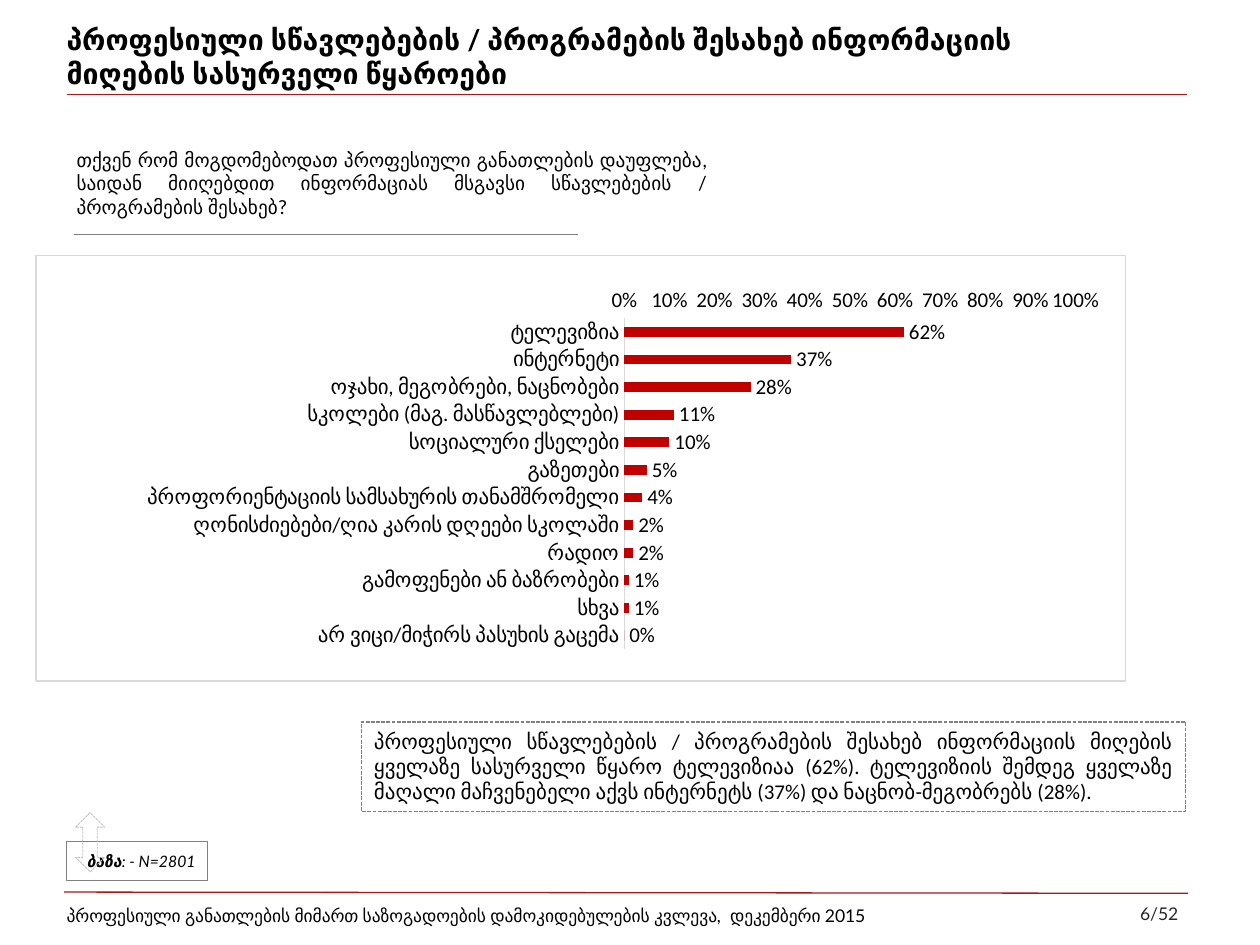
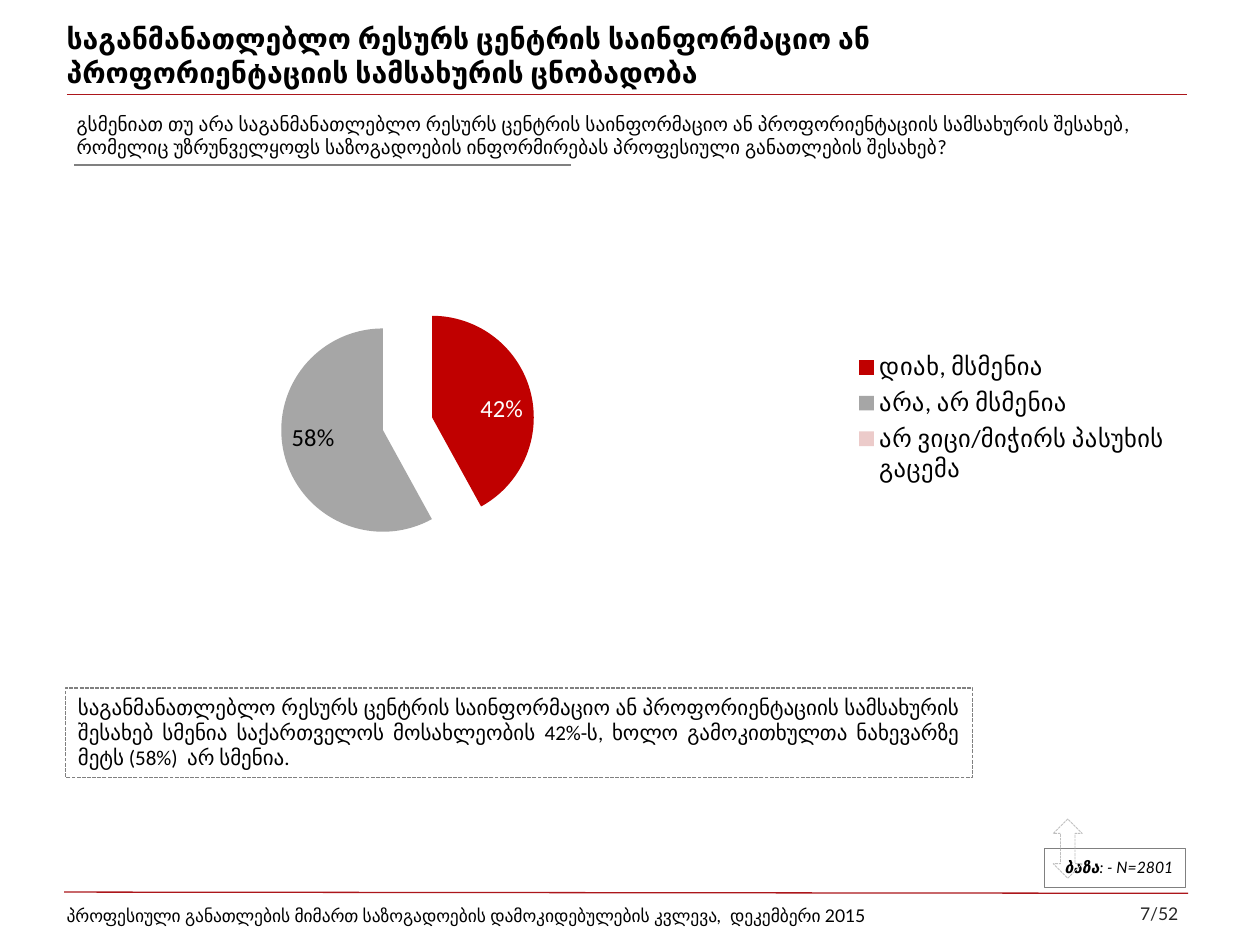
"""Builds two survey slides: preferred information sources and service awareness."""
from lxml.etree import SubElement
from pptx import Presentation
from pptx.chart.data import CategoryChartData
from pptx.dml.color import RGBColor
from pptx.enum.chart import XL_CHART_TYPE as ChartType, XL_LABEL_POSITION as LabelPosition
from pptx.enum.chart import XL_LEGEND_POSITION as LegendPosition, XL_TICK_MARK as TickMark
from pptx.enum.dml import MSO_LINE as Dash
from pptx.enum.shapes import MSO_CONNECTOR as Connector, MSO_SHAPE as Shape
from pptx.enum.text import MSO_ANCHOR as Anchor, PP_ALIGN as Align
from pptx.oxml import parse_xml
from pptx.oxml.ns import nsdecls, qn
from pptx.util import Inches, Pt

colour = RGBColor.from_string
BLACK, WHITE, RED, GREY = "000000", "FFFFFF", "C00000", "808080"
RULE_RED, PALE_GREY = "AC161B", "BFBFBF"
FOOTER = "პროფესიული განათლების მიმართ საზოგადოების დამოკიდებულების კვლევა,  დეკემბერი 2015"
TITLE_FONT = {"name": "Lato", "size": Pt(16.2), "bold": True}
QUESTION_FONT = {"name": "Lato", "size": Pt(11)}
FOOTER_FONT = {"name": "Lato", "size": Pt(10)}
NOTE_FONT = {"name": "Calibri", "size": Pt(12)}
BASE_FONT = {"name": "Lato", "size": Pt(9), "italic": True}


def write(holder, runs, align=Align.LEFT, anchor=Anchor.MIDDLE, ink=BLACK):
    """Fill a shape with one paragraph made of (text, font format) runs."""
    frame = holder.text_frame
    frame.word_wrap = True
    frame.vertical_anchor = anchor
    paragraph = frame.paragraphs[0]
    paragraph.alignment = align
    for words, font_format in runs:
        run = paragraph.add_run()
        run.text = words
        run.font.color.rgb = colour(ink)
        for attribute, value in font_format.items():
            setattr(run.font, attribute, value)


def set_layout(parent, index, box, target=None):
    """Give a plot area or legend a fixed place, in fractions of the chart."""
    for old in parent.findall(qn("c:layout")):
        parent.remove(old)
    layout = parse_xml(f"<c:layout {nsdecls('c')}><c:manualLayout/></c:layout>")
    settings = [("layoutTarget", target)] if target else []
    settings += [("xMode", "edge"), ("yMode", "edge"), *zip("xywh", box)]
    for tag, value in settings:
        SubElement(layout[0], qn(f"c:{tag}")).set("val", str(value))
    parent.insert(index, layout)


pages = [
    {
        "number": "6/52",
        "title": "პროფესიული სწავლებების / პროგრამების შესახებ ინფორმაციის მიღების სასურველი წყაროები",
        "title_box": (0.43, 0.21, 8.5, 0.47),
        "question": "თქვენ რომ მოგდომებოდათ პროფესიული განათლების დაუფლება, საიდან მიიღებდით "
                    "ინფორმაციას მსგავსი სწავლებების / პროგრამების შესახებ?",
        "question_box": (0.51, 1.13, 5.2, 0.66),
        "question_align": Align.JUSTIFY,
        "underline": (0.59, 1.86, 4.59, 1.86),
        "base_corner": (0.53, 6.68),
        "note": "პროფესიული სწავლებების / პროგრამების შესახებ ინფორმაციის მიღების ყველაზე სასურველი "
                "წყარო ტელევიზიაა (62%). ტელევიზიის შემდეგ ყველაზე მაღალი მაჩვენებელი აქვს "
                "ინტერნეტს (37%) და ნაცნობ-მეგობრებს (28%).",
        "note_box": (2.87, 5.73, 6.54, 0.71),
        "chart_type": ChartType.BAR_CLUSTERED,
        "chart_box": (0.28, 2.02, 8.66, 3.39),
        "chart_size": 12,
        "plot_box": (0.54, 0.148, 0.414, 0.778),
        "shares": {
            "ტელევიზია": 0.62,
            "ინტერნეტი": 0.37,
            "ოჯახი, მეგობრები, ნაცნობები": 0.28,
            "სკოლები (მაგ. მასწავლებლები)": 0.11,
            "სოციალური ქსელები": 0.1,
            "გაზეთები": 0.05,
            "პროფორიენტაციის სამსახურის თანამშრომელი": 0.04,
            "ღონისძიებები/ღია კარის დღეები სკოლაში": 0.02,
            "რადიო": 0.02,
            "გამოფენები ან ბაზრობები": 0.01,
            "სხვა": 0.01,
            "არ ვიცი/მიჭირს პასუხის გაცემა": 0,
        },
    },
    {
        "number": "7/52",
        "title": "საგანმანათლებლო რესურს ცენტრის საინფორმაციო ან პროფორიენტაციის სამსახურის ცნობადობა",
        "title_box": (0.43, 0.21, 8.35, 0.45),
        "question": "გსმენიათ თუ არა საგანმანათლებლო რესურს ცენტრის საინფორმაციო ან პროფორიენტაციის "
                    "სამსახურის შესახებ, რომელიც უზრუნველყოფს საზოგადოების ინფორმირებას "
                    "პროფესიული განათლების შესახებ?",
        "question_box": (0.51, 0.84, 8.58, 0.47),
        "question_align": Align.LEFT,
        "underline": (0.59, 1.31, 4.53, 1.31),
        "base_corner": (8.29, 6.73),
        "note": "საგანმანათლებლო რესურს ცენტრის საინფორმაციო ან პროფორიენტაციის სამსახურის შესახებ "
                "სმენია საქართველოს მოსახლეობის 42%-ს, ხოლო გამოკითხულთა ნახევარზე მეტს (58%)  "
                "არ სმენია.",
        "note_box": (0.52, 5.46, 7.2, 0.71),
        "chart_type": ChartType.PIE,
        "chart_box": (0.2, 1.55, 9.21, 3.54),
        "chart_size": 14,
        "plot_box": (0.22, 0.085, 0.219, 0.855),
        "shares": {
            "დიახ, მსმენია": 0.42,
            "არა, არ მსმენია": 0.58,
            "არ ვიცი/მიჭირს პასუხის გაცემა": 0,
        },
    },
]

deck = Presentation()
deck.slide_width, deck.slide_height = Inches(10), Inches(7.5)
charts = []

for page in pages:
    slide = deck.slides.add_slide(deck.slide_layouts[6])
    shapes = slide.shapes

    rules = [((0.51, 7.08, 9.43, 7.09), RULE_RED), ((0.53, 0.75, 9.42, 0.75), RULE_RED),
             (page["underline"], GREY)]
    for ends, ink in rules:
        rule = shapes.add_connector(Connector.STRAIGHT, *map(Inches, ends))
        rule.line.color.rgb = colour(ink)
        rule.line.width = Pt(0.75)
        SubElement(rule._element.spPr, qn("a:effectLst"))

    texts = [
        ((7.92, 7.04, 1.53, 0.42), page["number"], FOOTER_FONT, Align.RIGHT, Anchor.MIDDLE, "262626"),
        ((0.43, 7.07, 7.01, 0.4), FOOTER, FOOTER_FONT, Align.LEFT, Anchor.MIDDLE, BLACK),
        (page["title_box"], page["title"], TITLE_FONT, Align.LEFT, Anchor.MIDDLE, BLACK),
        (page["question_box"], page["question"], QUESTION_FONT, page["question_align"], Anchor.TOP, BLACK),
    ]
    for box, words, font_format, align, anchor, ink in texts:
        write(shapes.add_textbox(*map(Inches, box)), [(words, font_format)], align, anchor, ink)

    left, top = page["base_corner"]
    base = shapes.add_shape(Shape.RECTANGLE, *map(Inches, (left, top, 1.12, 0.31)))
    arrow = shapes.add_shape(Shape.UP_DOWN_ARROW, *map(Inches, (left + 0.07, top - 0.23, 0.23, 0.47)))
    note = shapes.add_shape(Shape.RECTANGLE, *map(Inches, page["note_box"]))
    outlines = [(base, GREY, 0.5, None), (arrow, PALE_GREY, 0.5, Dash.SQUARE_DOT),
                (note, GREY, 0.75, Dash.SQUARE_DOT)]
    for outlined, ink, width, dash in outlines:
        outlined.shadow.inherit = False
        outlined.fill.background()
        outlined.line.color.rgb = colour(ink)
        outlined.line.width = Pt(width)
        outlined.line.dash_style = dash
    write(base, [("ბაზა", {**BASE_FONT, "bold": True}), (": - N=2801", BASE_FONT)], Align.RIGHT)
    write(note, [(page["note"], NOTE_FONT)], Align.JUSTIFY, Anchor.TOP)

    survey = CategoryChartData(number_format="0%")
    survey.categories = list(page["shares"])
    survey.add_series("Series 1", list(page["shares"].values()))
    chart = shapes.add_chart(page["chart_type"], *map(Inches, page["chart_box"]), survey).chart
    chart.has_title = False
    chart.has_legend = False
    chart.font.name = "Calibri"
    chart.font.size = Pt(page["chart_size"])
    chart.font.color.rgb = colour(BLACK)
    set_layout(chart._chartSpace.chart.plotArea, 0, page["plot_box"], "inner")
    plot = chart.plots[0]
    plot.has_data_labels = True
    labels = plot.data_labels
    labels.show_value = True
    labels.show_percentage = False
    labels.number_format = "0%"
    labels.number_format_is_linked = False
    charts.append(chart)

sources, awareness = charts

source_plot = sources.plots[0]
source_plot.vary_by_categories = False
source_plot.gap_width, source_plot.overlap = 179, -47
source_plot.data_labels.position = LabelPosition.OUTSIDE_END
source_bars = source_plot.series[0].format.fill
source_bars.solid()
source_bars.fore_color.rgb = colour(RED)
source_axis, share_axis = sources.category_axis, sources.value_axis
for axis in (source_axis, share_axis):
    axis.major_tick_mark = axis.minor_tick_mark = TickMark.NONE
    axis.has_major_gridlines = False
source_axis.reverse_order = True
source_axis.format.line.color.rgb = colour("D9D9D9")
source_axis.format.line.width = Pt(0.75)
share_axis.format.line.fill.background()
share_axis.minimum_scale, share_axis.maximum_scale, share_axis.major_unit = 0, 1, 0.1
share_axis.tick_labels.number_format = "0%"
share_axis.tick_labels.number_format_is_linked = False
sources._chartSpace.chart.addnext(parse_xml(
    f'<c:spPr {nsdecls("c", "a")}><a:solidFill><a:srgbClr val="{WHITE}"/></a:solidFill>'
    '<a:ln w="9525"><a:solidFill><a:srgbClr val="D9D9D9"/></a:solidFill></a:ln></c:spPr>'))

awareness.has_legend = True
awareness.legend.position = LegendPosition.RIGHT
awareness.legend.include_in_layout = False
set_layout(awareness.legend._element, 1, (0.71, 0.34, 0.28, 0.32))
answers = awareness.plots[0].series[0]
answer_styles = [(RED, WHITE, LabelPosition.INSIDE_END), ("A6A6A6", BLACK, LabelPosition.INSIDE_END),
                 ("ECCBCA", BLACK, LabelPosition.OUTSIDE_END)]
for index, (slice_colour, label_colour, position) in enumerate(answer_styles):
    answer = answers.points[index]
    answer.format.fill.solid()
    answer.format.fill.fore_color.rgb = colour(slice_colour)
    label_font = answer.data_label.font
    label_font.size = Pt(14)
    label_font.color.rgb = colour(label_colour)
    answer.data_label.position = position
answers._element.find(qn("c:dPt")).addprevious(
    parse_xml(f'<c:explosion {nsdecls("c")} val="25"/>'))

deck.save("out.pptx")
